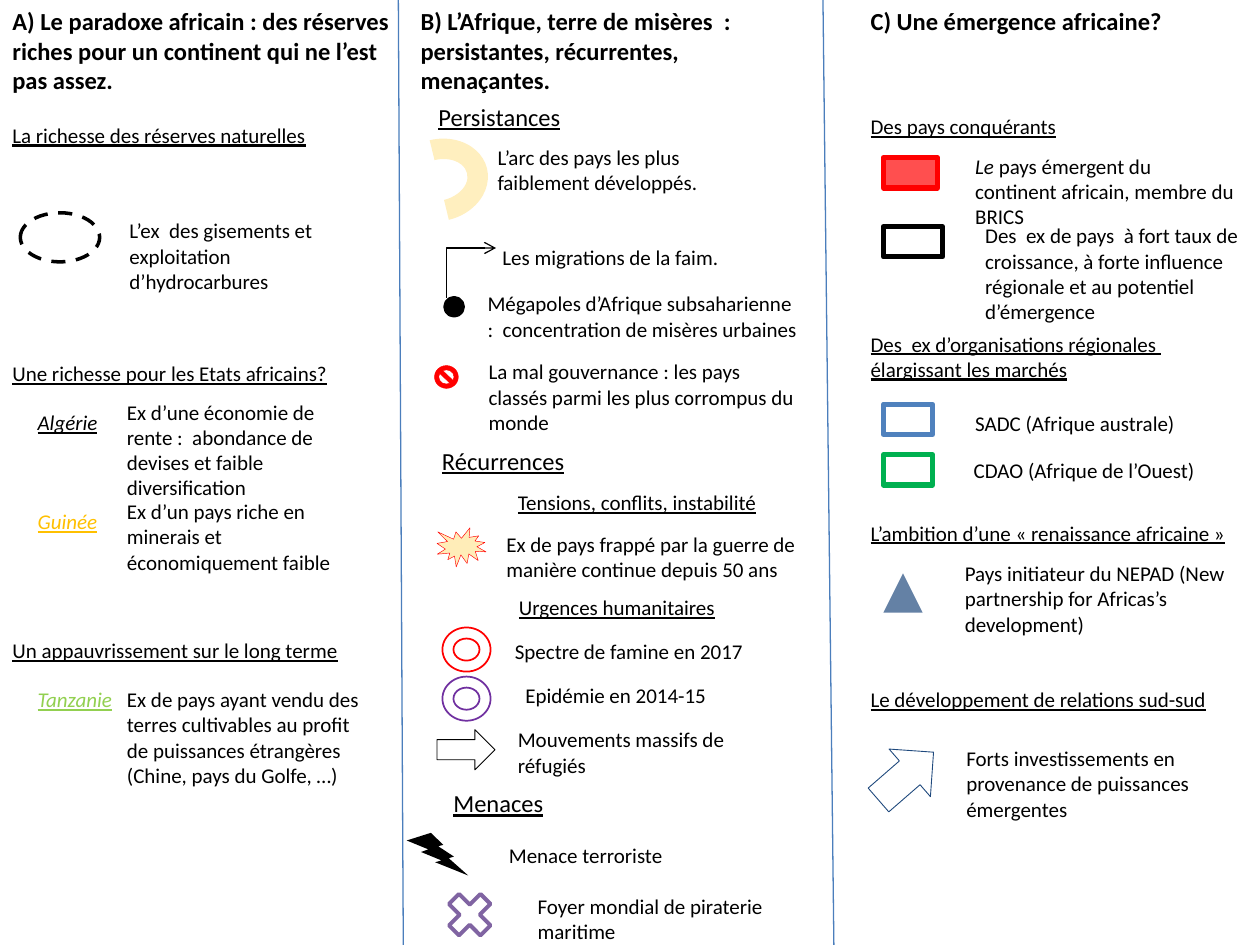
from lxml import etree
from pptx import Presentation
from pptx.dml.color import RGBColor
from pptx.enum.dml import MSO_LINE
from pptx.enum.shapes import MSO_CONNECTOR, MSO_SHAPE
from pptx.enum.text import MSO_AUTO_SIZE
from pptx.oxml.ns import qn
from pptx.util import Cm, Pt

OVAL, RECT, DONUT = MSO_SHAPE.OVAL, MSO_SHAPE.RECTANGLE, MSO_SHAPE.DONUT
ARROW, ARC, BURST = MSO_SHAPE.RIGHT_ARROW, MSO_SHAPE.BLOCK_ARC, MSO_SHAPE.EXPLOSION1
CROSS, BOLT = MSO_SHAPE.MATH_MULTIPLY, MSO_SHAPE.LIGHTNING_BOLT
BAN, PEAK = MSO_SHAPE.NO_SYMBOL, MSO_SHAPE.ISOSCELES_TRIANGLE
STRAIGHT, DASH, FIT = MSO_CONNECTOR.STRAIGHT, MSO_LINE.DASH, MSO_AUTO_SIZE.SHAPE_TO_FIT_TEXT

BLACK = RGBColor(0x00, 0x00, 0x00)
RED = RGBColor(0xFF, 0x00, 0x00)
GOLD = RGBColor(0xFF, 0xC0, 0x00)
LIME = RGBColor(0x92, 0xD0, 0x50)
GREEN = RGBColor(0x00, 0xB0, 0x50)
BLUE = RGBColor(0x4F, 0x81, 0xBD)
RULE = RGBColor(0x4B, 0x7E, 0xBC)
NAVY = RGBColor(0x1F, 0x49, 0x7D)
MAUVE = RGBColor(0x80, 0x64, 0xA2)
PURPLE = RGBColor(0x70, 0x30, 0xA0)

# Left edges of the three columns, in cm
COL_A, COL_B, COL_C = 0, 8.23, 17.3


class Legend:
    """Style and current slide; all lengths are in cm."""
    font = "Calibri"
    body, head = 12, 14

    def __init__(self, slide):
        self.shapes = slide.shapes

    def text(self, x, y, w, text, rows=1, size=body, color=BLACK, bold=False,
             italic=False, under=False, wrap=True, lead=""):
        """Text box as high as its rows; lead is an italic opening word."""
        high = 0.26 + rows * size * 0.043
        frame = self.shapes.add_textbox(Cm(x), Cm(y), Cm(w), Cm(high)).text_frame
        frame.word_wrap = wrap
        frame.auto_size = FIT
        para = frame.paragraphs[0]
        for words, slant in ((lead, True), (text, italic)):
            if words:
                run = para.add_run()
                run.text = words
                font = run.font
                font.name, font.size, font.color.rgb = self.font, Pt(size), color
                font.bold, font.italic, font.underline = bold, slant, under

    def title(self, x, text, rows):
        self.text(x, 0, 8.1, text, rows, size=self.head, bold=True)

    def heading(self, x, y, w, text):
        self.text(x, y, w, text, size=self.head, under=True, wrap=False)

    def theme(self, x, y, w, text, rows=1, wrap=False):
        self.text(x, y, w, text, rows, under=True, wrap=wrap)

    def paint(self, item, fill, alpha, line, width):
        item.shadow.inherit = False
        if fill is None:
            item.fill.background()
        else:
            item.fill.solid()
            item.fill.fore_color.rgb = fill
            if alpha < 100:
                tint = item._element.spPr.find(".//" + qn("a:srgbClr"))
                etree.SubElement(tint, qn("a:alpha"), val=str(alpha * 1000))
        if line is None:
            item.line.fill.background()
        else:
            item.line.color.rgb = line
            item.line.width = Pt(width)

    def sign(self, kind, x, y, w, h, fill=None, alpha=100, line=None, width=1, turn=0):
        item = self.shapes.add_shape(kind, Cm(x), Cm(y), Cm(w), Cm(h))
        item.rotation = turn
        self.paint(item, fill, alpha, line, width)
        return item

    def curve(self, knots, steps=8):
        """Chain of cubic curves ending in an open arrowhead."""
        dots = []
        for i in range(0, len(knots) - 1, 3):
            for n in range(1, steps + 1):
                t = n / steps
                load = ((1 - t) ** 3, 3 * t * (1 - t) ** 2, 3 * t * t * (1 - t), t ** 3)
                dots.append([sum(k * p[axis] for k, p in zip(load, knots[i:i + 4]))
                             for axis in (0, 1)])
        trace = self.shapes.build_freeform(*knots[0], scale=Cm(1))
        trace.add_line_segments(dots, close=False)
        item = trace.convert_to_shape()
        self.paint(item, None, 100, BLACK, 0.75)
        etree.SubElement(item._element.spPr.find(qn("a:ln")), qn("a:tailEnd"), type="arrow")

    def rule(self, top, foot):
        line = self.shapes.add_connector(STRAIGHT, Cm(top), Cm(0), Cm(foot), Cm(19.05))
        line.line.color.rgb = RULE
        line.line.width = Pt(0.75)
        etree.SubElement(line._element.spPr, qn("a:effectLst"))


def riches(key):
    key.title(COL_A, "A) Le paradoxe africain : des réserves riches pour un continent "
              "qui ne l’est pas assez.", 3)
    key.theme(COL_A, 2.34, 6.5, "La richesse des réserves naturelles")
    key.theme(COL_A, 7.14, 6.93, "Une richesse pour les Etats africains?")
    key.theme(COL_A, 12.73, 8.31, "Un appauvrissement sur le long terme", wrap=True)
    field = key.sign(OVAL, 0.41, 4.29, 1.6, 0.99, line=BLACK, width=2)
    field.line.dash_style = DASH
    for x, y, rows, text in (
            (2.36, 4.27, 3, "L’ex  des gisements et exploitation d’hydrocarbures"),
            (2.31, 7.92, 4, "Ex d’une économie de rente :  abondance de devises et "
             "faible diversification"),
            (2.31, 9.93, 3, "Ex d’un pays riche en minerais et économiquement faible"),
            (2.31, 13.72, 4, "Ex de pays ayant vendu des terres cultivables au profit "
             "de puissances étrangères (Chine, pays du Golfe, …)")):
        key.text(x, y, 5.41, text, rows)
    for y, w, name, color in ((8.13, 1.73, "Algérie", BLACK),
                              (10.13, 1.73, "Guinée", GOLD),
                              (13.72, 2.03, "Tanzanie", LIME)):
        key.text(0.51, y, w, name, color=color, italic=True, under=True, wrap=False)


def woes(key):
    key.title(COL_B, "B) L’Afrique, terre de misères  : persistantes, récurrentes, "
              "menaçantes.", 3)
    key.heading(8.59, 1.93, 3, "Persistances")
    key.heading(8.66, 8.86, 3, "Récurrences")
    key.heading(8.89, 15.77, 2.34, "Menaces")
    key.theme(10.19, 9.75, 5.59, "Tensions, conflits, instabilité")
    key.theme(10.21, 11.86, 4.5, "Urgences humanitaires")
    # Signs
    key.sign(ARC, 8.03, 2.64, 1.65, 1.98, fill=GOLD, alpha=25, turn=76.5)
    key.curve([(8.79, 5.56), (8.89, 5.54), (9.02, 5.51), (9.12, 5.41), (9.22, 5.33),
               (9.35, 5.13), (9.42, 5), (9.5, 4.88), (9.53, 4.78), (9.55, 4.67)])
    key.sign(OVAL, 8.99, 6.02, 0.33, 0.33, fill=BLACK, line=BLACK, width=3)
    key.sign(BAN, 8.76, 7.37, 0.48, 0.46, fill=RED, line=RED, width=0.25)
    key.sign(BURST, 8.81, 10.64, 0.99, 0.79, fill=GOLD, alpha=28, line=RED, width=0.25)
    for y, color in ((12.65, RED), (13.64, PURPLE)):
        key.sign(DONUT, 8.92, y, 0.97, 0.89, line=color)
    key.sign(ARROW, 8.81, 14.71, 1.17, 0.81, line=BLACK, width=0.5)
    key.sign(BOLT, 8.2, 16.79, 1.24, 0.86, fill=BLACK)
    key.sign(CROSS, 8.86, 17.83, 1.22, 1.22, line=MAUVE, width=2.25)
    # Meanings
    for x, y, w, rows, text in (
            (9.78, 2.79, 5.79, 2, "L’arc des pays les plus faiblement développés."),
            (9.88, 4.8, 5.79, 1, "Les migrations de la faim."),
            (9.58, 5.74, 6.81, 2, "Mégapoles d’Afrique subsaharienne  :  concentration "
             "de misères urbaines"),
            (9.6, 7.11, 6.68, 3, "La mal gouvernance : les pays classés parmi les plus "
             "corrompus du monde"),
            (9.96, 10.59, 6.68, 2, "Ex de pays frappé par la guerre de manière continue "
             "depuis 50 ans"),
            (10.13, 12.75, 5.79, 1, "Spectre de famine en 2017"),
            (10.34, 13.64, 5.79, 1, "Epidémie en 2014-15"),
            (10.19, 14.53, 5.61, 2, "Mouvements massifs de réfugiés"),
            (10.01, 16.87, 5.61, 1, "Menace terroriste"),
            (10.59, 17.88, 5.61, 2, "Foyer mondial de piraterie maritime")):
        key.text(x, y, w, text, rows)


def rise(key):
    key.title(COL_C, "C) Une émergence africaine?", 1)
    for y, w, rows, text in (
            (2.16, 5.79, 1, "Des pays conquérants"),
            (6.55, 8.1, 2, "Des  ex d’organisations régionales  élargissant les marchés"),
            (10.36, 7.7, 1, "L’ambition d’une « renaissance africaine »"),
            (13.72, 7.7, 1, "Le développement de relations sud-sud")):
        key.theme(COL_C, y, w, text, rows, wrap=True)
    # Signs
    for y, w, line, fill in ((3.18, 1.09, RED, RED), (4.57, 1.19, BLACK, None),
                             (8.15, 0.99, BLUE, None), (9.17, 0.99, GREEN, None)):
        key.sign(RECT, 17.81, y, w, 0.61, fill=fill, alpha=69, line=line, width=3)
    key.sign(PEAK, 17.81, 11.56, 0.79, 0.79, fill=NAVY, alpha=69)
    key.sign(ARROW, 17.53, 15.01, 1.47, 1.27, line=NAVY, width=0.5, turn=319)
    # Meanings
    key.text(19.41, 2.97, 5.79, " pays émergent du continent africain, membre du BRICS",
             2, lead="Le")
    key.text(19.41, 8.15, 4.57, "SADC (Afrique australe)", wrap=False)
    key.text(19.38, 9.09, 5, "CDAO (Afrique de l’Ouest)", wrap=False)
    for x, y, rows, text in (
            (19.61, 4.37, 4, "Des  ex de pays  à fort taux de croissance, à forte influence "
             "régionale et au potentiel d’émergence"),
            (19.2, 11.18, 3, "Pays initiateur du NEPAD (New partnership for Africas’s "
             "development)"),
            (19.23, 14.91, 3, "Forts investissements en provenance de puissances "
             "émergentes")):
        key.text(x, y, 5.79, text, rows)


def main():
    deck = Presentation()
    deck.slide_width, deck.slide_height = Cm(25.4), Cm(19.05)
    key = Legend(deck.slides.add_slide(deck.slide_layouts[6]))
    riches(key)
    woes(key)
    rise(key)
    # Column rules
    key.rule(8.03, 8.13)
    key.rule(16.59, 16.81)
    deck.save("out.pptx")


if __name__ == "__main__":
    main()
